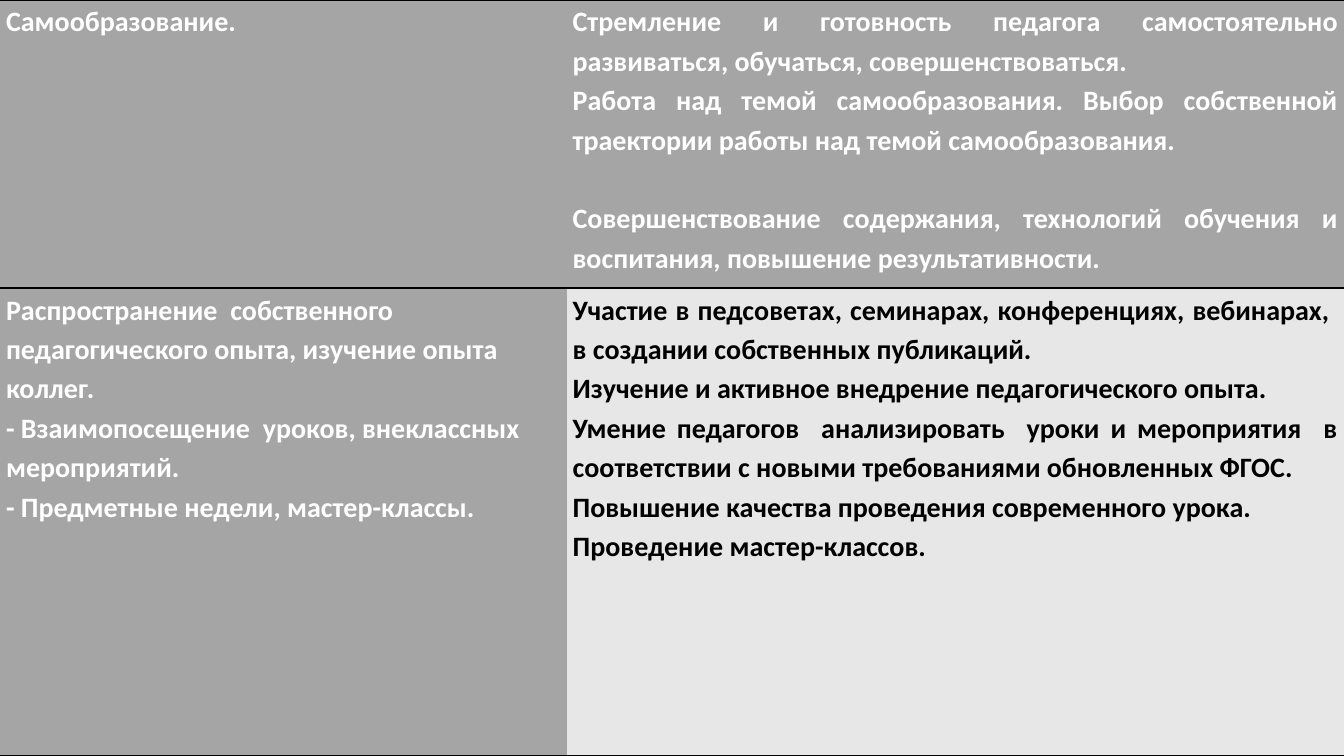
from lxml import etree
from pptx import Presentation
from pptx.dml.color import RGBColor
from pptx.enum.text import PP_ALIGN
from pptx.oxml.ns import qn
from pptx.util import Inches, Pt

LEFT, JUSTIFY = PP_ALIGN.LEFT, PP_ALIGN.JUSTIFY
WHITE, BLACK, GREY, PALE = "FFFFFF", "000000", "A5A5A5", "E7E7E7"
FONT, SIZE, LINE_SPACING = "Calibri", 20, 1.15
COLUMN_WIDTHS = [5.62, 7.71]
ROW_HEIGHTS = [2.86, 4.64]

TOPIC_SELF_STUDY = ["Самообразование."]
RESULT_SELF_STUDY = [
    "Стремление и готовность педагога самостоятельно развиваться, обучаться, совершенствоваться.",
    "Работа над темой самообразования. Выбор собственной траектории работы над темой самообразования.",
    "Совершенствование содержания, технологий обучения и воспитания, повышение результативности.",
]
TOPIC_SHARING = [
    "Распространение  собственного педагогического опыта, изучение опыта коллег.",
    "- Взаимопосещение  уроков, внеклассных мероприятий.",
    "- Предметные недели, мастер-классы.",
]
RESULT_SHARING = [
    "Участие в педсоветах, семинарах, конференциях, вебинарах,  в создании собственных публикаций.",
    "Изучение и активное внедрение педагогического опыта.",
    "Умение педагогов  анализировать  уроки и мероприятия  в соответствии с новыми требованиями обновленных ФГОС.",
    "Повышение качества проведения современного урока.",
    "Проведение мастер-классов.",
]


def color(value):
    return RGBColor.from_string(value)


def set_borders(cell):
    """Rule the cell above and below, with no lines at its sides."""
    properties = cell._tc.get_or_add_tcPr()
    for index, side in enumerate(["lnL", "lnR", "lnT", "lnB"]):
        line = etree.Element(qn(f"a:{side}"))
        if side in ("lnT", "lnB"):
            line.set("w", str(Pt(2)))
            fill = etree.SubElement(line, qn("a:solidFill"))
            etree.SubElement(fill, qn("a:srgbClr"), val=BLACK)
        else:
            etree.SubElement(line, qn("a:noFill"))
        properties.insert(index, line)


def fill_cell(cell, paragraphs, align, text_color, background):
    cell.fill.solid()
    cell.fill.fore_color.rgb = color(background)
    cell.margin_left = cell.margin_right = Inches(0.06)
    cell.margin_top = cell.margin_bottom = 0
    frame = cell.text_frame
    for index, text in enumerate(paragraphs):
        para = frame.add_paragraph() if index else frame.paragraphs[0]
        para.alignment = align
        para.line_spacing = LINE_SPACING
        span = para.add_run()
        span.text = text
        span.font.name = FONT
        span.font.size = Pt(SIZE)
        span.font.bold = True
        span.font.color.rgb = color(text_color)
    set_borders(cell)


def add_grid(page):
    frame = page.shapes.add_table(2, 2, 0, 0, Inches(13.33), Inches(7.5))
    table = frame.table
    table.first_row = table.horz_banding = False
    for column, width in zip(table.columns, COLUMN_WIDTHS):
        column.width = Inches(width)
    for row, height in zip(table.rows, ROW_HEIGHTS):
        row.height = Inches(height)
    return table


def main():
    deck = Presentation()
    deck.slide_width, deck.slide_height = Inches(13.33), Inches(7.5)
    page = deck.slides.add_slide(deck.slide_layouts[6])
    table = add_grid(page)

    # Self-education
    fill_cell(table.cell(0, 0), TOPIC_SELF_STUDY, LEFT, WHITE, GREY)
    fill_cell(table.cell(0, 1), RESULT_SELF_STUDY, JUSTIFY, WHITE, GREY)
    # One line of space before the closing paragraph
    table.cell(0, 1).text_frame.paragraphs[-1].space_before = Pt(28)

    # Sharing of experience
    fill_cell(table.cell(1, 0), TOPIC_SHARING, LEFT, WHITE, GREY)
    fill_cell(table.cell(1, 1), RESULT_SHARING, JUSTIFY, BLACK, PALE)

    deck.save("out.pptx")


if __name__ == "__main__":
    main()
